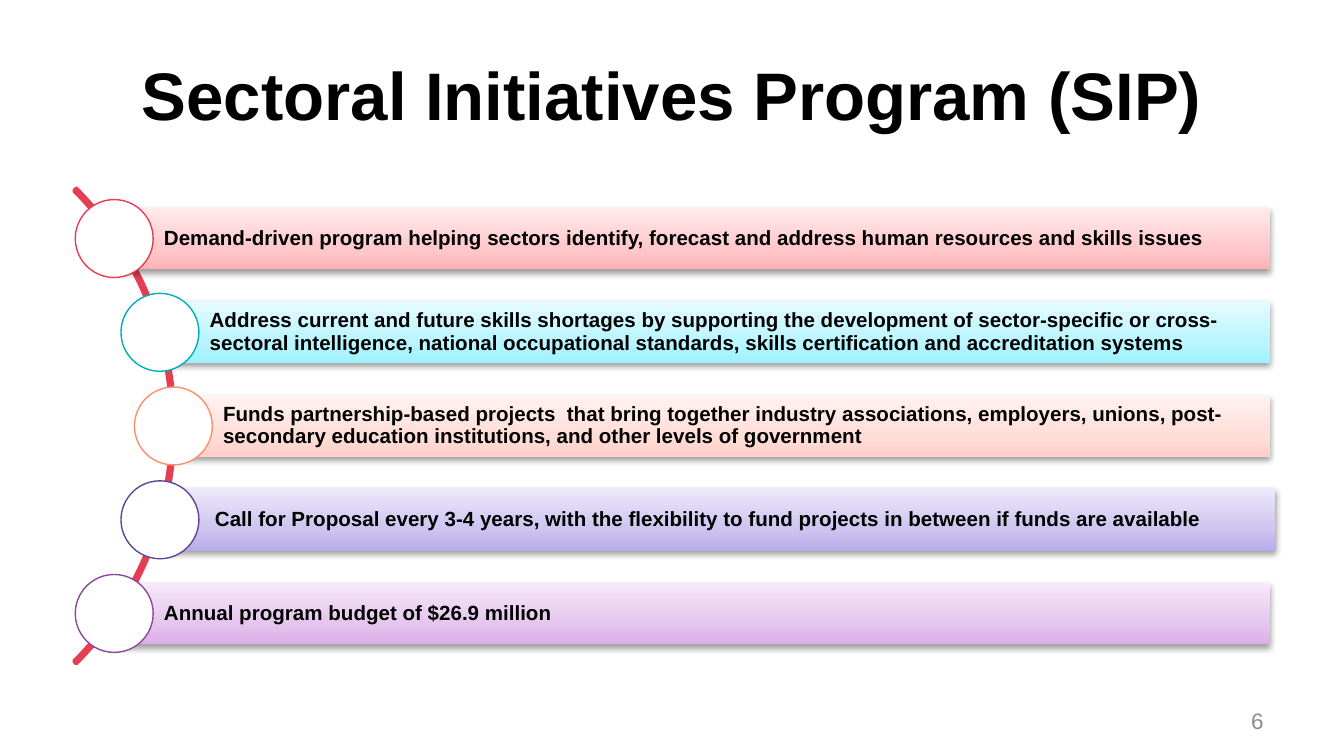
import copy
import pptx
import pptx.dml.color
import pptx.enum.shapes
import pptx.enum.text
import pptx.oxml
import pptx.oxml.ns
import pptx.util
from dataclasses import dataclass

Inches = pptx.util.Inches
Pt = pptx.util.Pt
rgb = pptx.dml.color.RGBColor.from_string
qn = pptx.oxml.ns.qn
Kind = pptx.enum.shapes.MSO_SHAPE
Align = pptx.enum.text.PP_ALIGN


@dataclass(frozen=True)
class Theme:
    font: str = "Arial"
    ink: str = "000000"
    muted: str = "8C8C8C"
    paper: str = "FFFFFF"
    arc: str = "E53D51"
    title_size: int = 36
    point_size: int = 11
    number_size: int = 12
    red: tuple = ("E53D51", "FFB3B7", "FFC9CC", "FFEBEC")
    teal: tuple = ("00ADBA", "9EF1FF", "BAF5FF", "E5FBFF")
    coral: tuple = ("FF8D6B", "FFD0C7", "FFDED8", "FFF2F0")
    indigo: tuple = ("5E459C", "B8ACE9", "CDC5EF", "ECE8FA")
    purple: tuple = ("8E469B", "DCADE9", "E6C6EE", "F6E9F9")


theme = Theme()


def write(holder, text, *, size, color=theme.ink, bold=False, align=Align.LEFT,
          spacing=1.0, insets=(0.1, 0.05, 0.1, 0.05)):
    frame = holder.text_frame
    frame.word_wrap = True
    frame.auto_size = pptx.enum.text.MSO_AUTO_SIZE.NONE
    frame.vertical_anchor = pptx.enum.text.MSO_ANCHOR.MIDDLE
    frame.margin_left, frame.margin_top, frame.margin_right, frame.margin_bottom = map(Inches, insets)
    paragraph = frame.paragraphs[0]
    paragraph.alignment = align
    paragraph.line_spacing = spacing
    run = paragraph.add_run()
    run.text = text
    run.font.name = theme.font
    run.font.size = Pt(size)
    run.font.bold = bold
    run.font.color.rgb = rgb(color)


def add_flat(kind, left, top, width, height):
    shape = slide.shapes.add_shape(kind, Inches(left), Inches(top), Inches(width), Inches(height))
    shape.shadow.inherit = False
    return shape


deck = pptx.Presentation()
deck.slide_width = Inches(10)
deck.slide_height = Inches(10 * 9 / 16)
slide = deck.slides.add_slide(deck.slide_layouts[5])

title = slide.shapes.title
title.left, title.top, title.width, title.height = map(Inches, (0.5, 0.23, 9, 0.94))
write(title, "Sectoral Initiatives Program (SIP)", size=theme.title_size, bold=True, align=Align.CENTER)

page_number = slide.shapes.add_textbox(Inches(7.17), Inches(5.21), Inches(2.33), Inches(0.3))
write(page_number, "6", size=theme.number_size, color=theme.muted, align=Align.RIGHT)

middle = 3.17
radius = 2.5
pitch = 2.79 / 4
bar_height = 0.46
circle_size = 0.58
bar_right = 9.45

arc = add_flat(Kind.BLOCK_ARC, -3.7, middle - radius, 2 * radius, 2 * radius)
arc.adjustments[0] = 189
arc.adjustments[1] = 27
arc.adjustments[2] = 0.005
arc.fill.background()
arc.line.color.rgb = rgb(theme.arc)
arc.line.width = Pt(2)

points = [
    ("Demand-driven program helping sectors identify, forecast and address human resources and skills issues",
     0.85, 0, theme.red),
    ("Address current and future skills shortages by supporting the development of sector-specific or "
     "cross-sectoral intelligence, national occupational standards, skills certification and "
     "accreditation systems", 1.19, 0, theme.teal),
    ("Funds partnership-based projects  that bring together industry associations, employers, unions, "
     "post-secondary education institutions, and other levels of government", 1.29, 0, theme.coral),
    ("Call for Proposal every 3-4 years, with the flexibility to fund projects in between if funds are available",
     1.19, 0.04, theme.indigo),
    ("Annual program budget of $26.9 million", 0.85, 0, theme.purple),
]

for row, (point, center_x, shift, (outline, *tints)) in enumerate(points):
    center_y = middle + (row - 2) * pitch

    bar = add_flat(Kind.RECTANGLE, center_x + shift, center_y - bar_height / 2,
                   bar_right - center_x, bar_height)
    bar.line.fill.background()
    bar.fill.gradient()
    bar.fill.gradient_angle = 90
    properties = bar._element.spPr
    first_stop = properties.find(".//" + qn("a:gs"))
    first_stop.addnext(copy.deepcopy(first_stop))
    for stop, position, tint in zip(bar.fill.gradient_stops, (0, 0.35, 1), tints):
        stop.position = position
        stop.color.rgb = rgb(tint)
    properties.find(qn("a:effectLst")).append(pptx.oxml.parse_xml(
        '<a:outerShdw xmlns:a="http://schemas.openxmlformats.org/drawingml/2006/main" '
        'blurRad="40000" dist="20000" dir="5400000" rotWithShape="0">'
        f'<a:srgbClr val="{theme.ink}"><a:alpha val="38000"/></a:srgbClr></a:outerShdw>'))
    write(bar, point, size=theme.point_size, bold=True, spacing=0.9, insets=(0.37, 0.03, 0.03, 0.03))

    circle = add_flat(Kind.OVAL, center_x - circle_size / 2, center_y - circle_size / 2,
                      circle_size, circle_size)
    circle.fill.solid()
    circle.fill.fore_color.rgb = rgb(theme.paper)
    circle.line.color.rgb = rgb(outline)
    circle.line.width = Pt(0.75)

deck.save("out.pptx")
